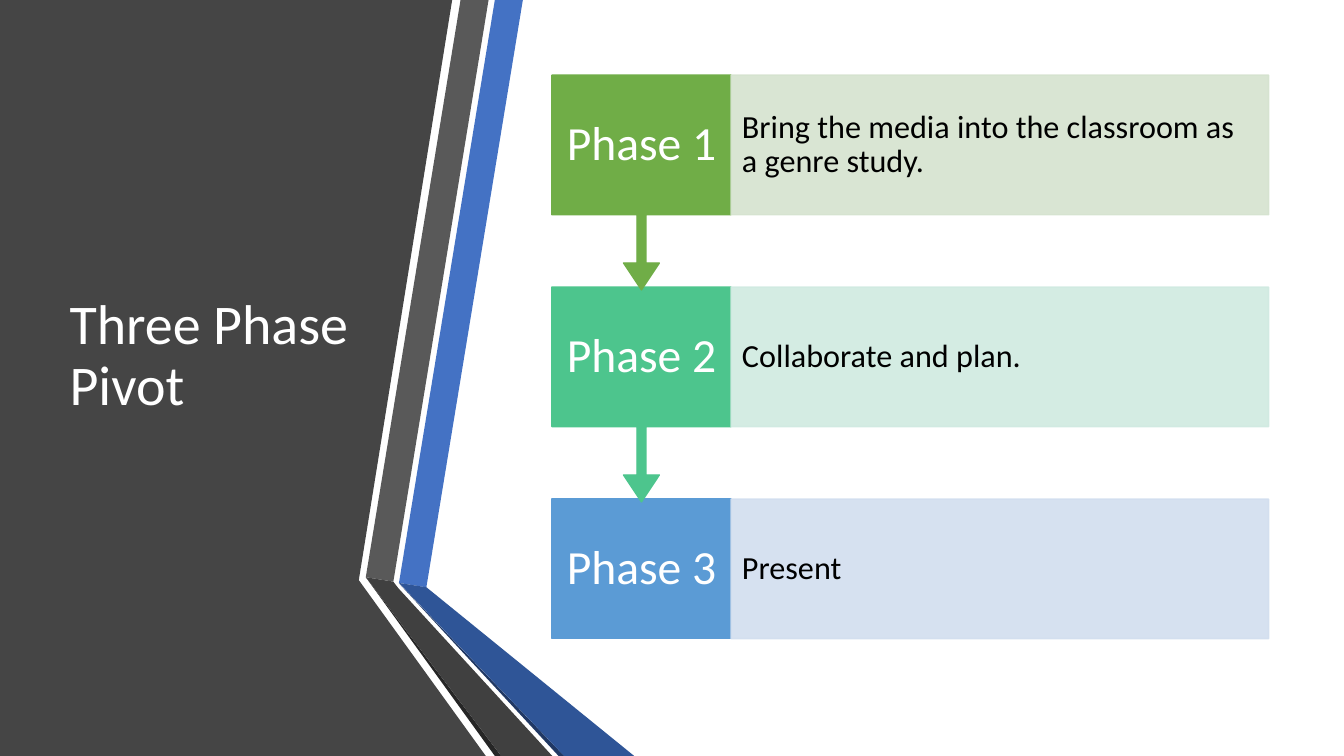
import pptx
import pptx.dml.color
import pptx.enum.shapes
import pptx.enum.text
import pptx.oxml.ns
import pptx.util
from lxml import etree

Pt = pptx.util.Pt
RGB = pptx.dml.color.RGBColor
MSO_SHAPE = pptx.enum.shapes.MSO_SHAPE
PP_ALIGN = pptx.enum.text.PP_ALIGN
qn = pptx.oxml.ns.qn

WHITE = RGB(0xFF, 0xFF, 0xFF)
BLACK = RGB(0x00, 0x00, 0x00)
CHARCOAL = RGB(0x45, 0x45, 0x45)
BLUE = RGB(0x44, 0x72, 0xC4)
DARK_BLUE = RGB(0x2F, 0x55, 0x97)
NAVY = RGB(0x20, 0x38, 0x64)
GRAY = RGB(0x59, 0x59, 0x59)
DARK_GRAY = RGB(0x40, 0x40, 0x40)
NEAR_BLACK = RGB(0x26, 0x26, 0x26)
GREEN = RGB(0x70, 0xAD, 0x47)
PALE_GREEN = RGB(0xD5, 0xE3, 0xCF)
TEAL = RGB(0x4D, 0xC5, 0x8D)
PALE_TEAL = RGB(0xD0, 0xEA, 0xE1)
SKY = RGB(0x5B, 0x9B, 0xD5)
PALE_SKY = RGB(0xD2, 0xDE, 0xEF)

# Content
TITLE = "Three Phase Pivot"
PHASES = [
    ("Phase 1", "Bring the media into the classroom as a genre study.", GREEN, PALE_GREEN),
    ("Phase 2", "Collaborate and plan.", TEAL, PALE_TEAL),
    ("Phase 3", "Present", SKY, PALE_SKY),
]

# Side panel and folded ribbons, corners in points
SIDE_ART = [
    (CHARCOAL, [(0, 0), (323, 0), (256.3, 414.4), (347, 540), (0, 540)]),
    (BLUE, [(285, 416.4), (304.6, 419.5), (373.5, 0), (353.5, 0)]),
    (GRAY, [(349, 0), (329, 0), (261.3, 412.3), (281, 415.5)]),
    (NEAR_BLACK, [(261.3, 412.3), (353.5, 540), (358, 540)]),
    (NAVY, [(285, 416.7), (399, 540), (403, 540)]),
    (DARK_BLUE, [(285, 416.4), (403, 540), (453, 540), (304.6, 419.5)]),
    (DARK_GRAY, [(394.5, 540), (284.4, 420), (281, 415.5), (261.3, 412.3), (358, 540)]),
]

# Layout in points
ROW_TOP, ROW_PITCH, ROW_HEIGHT = 53.7, 151.4, 99.7
LABEL_LEFT, LABEL_WIDTH, DETAIL_WIDTH = 394.2, 128, 384
CALLOUT_HEIGHT = 153.4
ARROW_RATIOS = (0.05, 0.1, 0.15, ROW_HEIGHT / CALLOUT_HEIGHT)

prs = pptx.Presentation()
prs.slide_width, prs.slide_height = Pt(960), Pt(540)
slide = prs.slides.add_slide(prs.slide_layouts[5])


def write(shape, text, size, color, align, inset):
    frame = shape.text_frame
    frame.word_wrap = True
    frame.auto_size = pptx.enum.text.MSO_AUTO_SIZE.NONE
    frame.vertical_anchor = pptx.enum.text.MSO_ANCHOR.MIDDLE
    frame.margin_left = frame.margin_right = Pt(inset)
    frame.margin_top = frame.margin_bottom = Pt(3.6)
    paragraph = frame.paragraphs[0]
    paragraph.text = text
    paragraph.alignment = align
    paragraph.line_spacing = 0.9
    paragraph.space_before = Pt(0)
    paragraph.font.name = "Calibri"
    paragraph.font.size = Pt(size)
    paragraph.font.color.rgb = color


def add_block(kind, left, top, width, height, color):
    block = slide.shapes.add_shape(kind, Pt(left), Pt(top), Pt(width), Pt(height))
    block.shadow.inherit = False
    block.fill.solid()
    block.fill.fore_color.rgb = color
    block.line.color.rgb = color
    block.line.width = Pt(1)
    return block


# Side art
for color, corners in SIDE_ART:
    start, *others = [(Pt(x), Pt(y)) for x, y in corners]
    builder = slide.shapes.build_freeform(*start)
    builder.add_line_segments(others, close=True)
    facet = builder.convert_to_shape()
    facet.shadow.inherit = False
    facet.fill.solid()
    facet.fill.fore_color.rgb = color
    facet.line.fill.background()

# Title, brought in front of the panel
title = slide.shapes.title
title.left, title.top, title.width, title.height = Pt(42.5), Pt(54), Pt(219), Pt(402)
write(title, TITLE, 40, WHITE, PP_ALIGN.LEFT, 7.2)
title.element.getparent().append(title.element)

# Phases, last first so that each arrow tip lies over the next row
for row, (phase, detail, color, pale) in reversed(list(enumerate(PHASES))):
    top = ROW_TOP + row * ROW_PITCH
    is_last = row == len(PHASES) - 1
    label = add_block(
        MSO_SHAPE.RECTANGLE if is_last else MSO_SHAPE.DOWN_ARROW_CALLOUT,
        LABEL_LEFT, top, LABEL_WIDTH, ROW_HEIGHT if is_last else CALLOUT_HEIGHT, color)
    if not is_last:
        for index, ratio in enumerate(ARROW_RATIOS):
            label.adjustments[index] = ratio
    write(label, phase, 34, WHITE, PP_ALIGN.CENTER, 9.1)

    band = add_block(MSO_SHAPE.RECTANGLE, LABEL_LEFT + LABEL_WIDTH, top,
                     DETAIL_WIDTH, ROW_HEIGHT, pale)
    for tint in band.element.spPr.iter(qn("a:srgbClr")):
        etree.SubElement(tint, qn("a:alpha"), val="90000")
    write(band, detail, 23, BLACK, PP_ALIGN.LEFT, 7.8)

prs.save("out.pptx")
